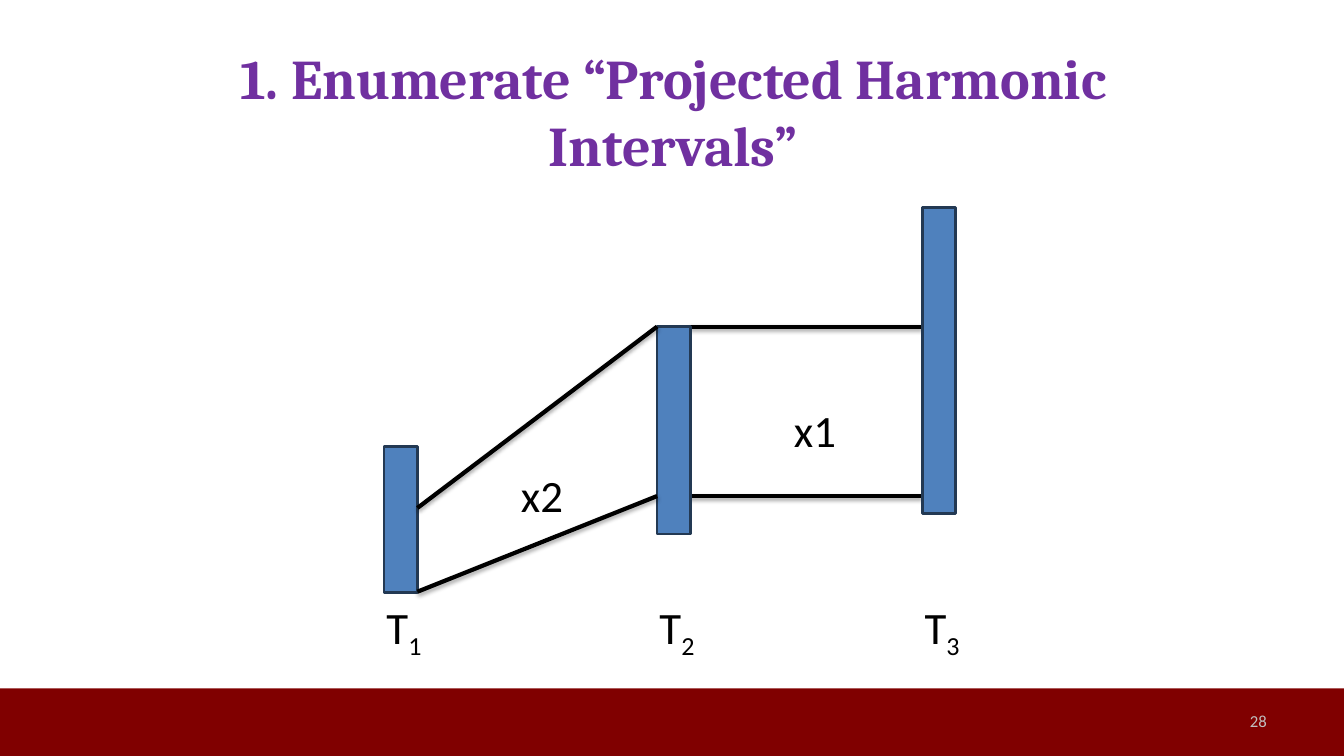
from lxml import etree
from pptx import Presentation
from pptx import util as u
from pptx.dml.color import RGBColor
from pptx.enum import shapes, text
from pptx.oxml import parse_xml
from pptx.oxml.ns import nsdecls
from pptx.util import Cm

MAROON = RGBColor(0x80, 0x00, 0x00)
PURPLE = RGBColor(0x70, 0x30, 0xA0)
BLUE = RGBColor(0x4F, 0x81, 0xBD)
NAVY = RGBColor(0x23, 0x39, 0x53)
BLACK = RGBColor(0x00, 0x00, 0x00)
GREY = RGBColor(0xBF, 0xBF, 0xBF)

SHADOW = f'''<a:effectLst {nsdecls("a")}>
  <a:outerShdw blurRad="39400" dist="22900" dir="5400000" rotWithShape="0">
    <a:srgbClr val="000000"><a:alpha val="35000"/></a:srgbClr>
  </a:outerShdw>
</a:effectLst>'''

prs = Presentation()
prs.slide_width, prs.slide_height = Cm(33.87), Cm(19.05)
slide = prs.slides.add_slide(prs.slide_layouts[5])


def add_projection(x1, y1, x2, y2):
    edge = slide.shapes.add_connector(
        shapes.MSO_CONNECTOR.STRAIGHT, Cm(x1), Cm(y1), Cm(x2), Cm(y2))
    edge.line.color.rgb = BLACK
    edge.line.width = u.Pt(3)
    edge._element.spPr.append(parse_xml(SHADOW))


def add_label(left, top, width, height, words, subscript=""):
    label = slide.shapes.add_textbox(Cm(left), Cm(top), Cm(width), Cm(height))
    label.text_frame.word_wrap = False
    label.text_frame.auto_size = text.MSO_AUTO_SIZE.SHAPE_TO_FIT_TEXT
    for part, baseline in ((words, None), (subscript, "-25000")):
        if not part:
            continue
        run = label.text_frame.paragraphs[0].add_run()
        run.text = part
        run.font.name, run.font.size = "Calibri", u.Pt(32)
        run.font.color.rgb = BLACK
        if baseline:
            run.font._element.set("baseline", baseline)


# Footer band and slide number
band = slide.shapes.add_shape(
    shapes.MSO_SHAPE.RECTANGLE, 0, Cm(17.35), prs.slide_width, Cm(1.7))
band.shadow.inherit = False
band.fill.solid()
band.fill.fore_color.rgb = MAROON
band.line.fill.background()

number = slide.shapes.add_textbox(Cm(24.28), Cm(17.65), Cm(7.9), Cm(1.02))
number.text_frame.text = "28"
number.text_frame.word_wrap = True
number.text_frame.vertical_anchor = text.MSO_ANCHOR.MIDDLE

# Title
title = slide.shapes.title
title.left, title.top, title.width, title.height = Cm(4.27), Cm(0.97), Cm(25.4), Cm(3.68)
title.text_frame.text = "1. Enumerate “Projected Harmonic Intervals”"
title.text_frame.word_wrap = True
title.text_frame.vertical_anchor = text.MSO_ANCHOR.TOP
title.text_frame.auto_size = text.MSO_AUTO_SIZE.SHAPE_TO_FIT_TEXT

formats = (
    (number, text.PP_ALIGN.RIGHT, GREY,
     {"name": "Calibri", "size": u.Pt(12)}),
    (title, text.PP_ALIGN.CENTER, PURPLE,
     {"name": "Cambria", "size": u.Pt(40), "bold": True}),
)
for box, alignment, colour, values in formats:
    paragraph = box.text_frame.paragraphs[0]
    paragraph.alignment = alignment
    font = paragraph.runs[0].font
    font.color.rgb = colour
    for key, value in values.items():
        setattr(font, key, value)

# Projection x1 from T2 to T3, behind the bars
BAR_WIDTH = 0.84
UPPER, LOWER = 8.23, 12.5
T1, T2, T3 = 9.68, 16.56, 23.24
for start, y in ((T2 + 0.66, LOWER), (T2 + BAR_WIDTH, UPPER)):
    add_projection(start, y, T3, y)

# Interval bars with their labels
bars = ((T1, 11.25, 3.68), (T2, UPPER, 5.23), (T3, 5.23, 7.72))
for index, (left, top, height) in enumerate(bars, start=1):
    bar = slide.shapes.add_shape(
        shapes.MSO_SHAPE.RECTANGLE, Cm(left), Cm(top), Cm(BAR_WIDTH), Cm(height))
    bar.shadow.inherit = False
    bar.fill.solid()
    bar.fill.fore_color.rgb = BLUE
    bar.line.color.rgb = NAVY
    bar.line.width = u.Pt(2)
    add_label(left - 0.19, 14.99, 1.45, 1.63, "T", str(index))

# Projection x2 from T1 to T2
for y1, y2 in ((12.8, UPPER), (14.91, LOWER)):
    add_projection(T1 + BAR_WIDTH, y1, T2, y2)

# Multipliers
for left, top, words in ((12.88, 11.66, "x2"), (19.76, 10.03, "x1")):
    add_label(left, top, 1.57, 1.63, words)

prs.save("out.pptx")
